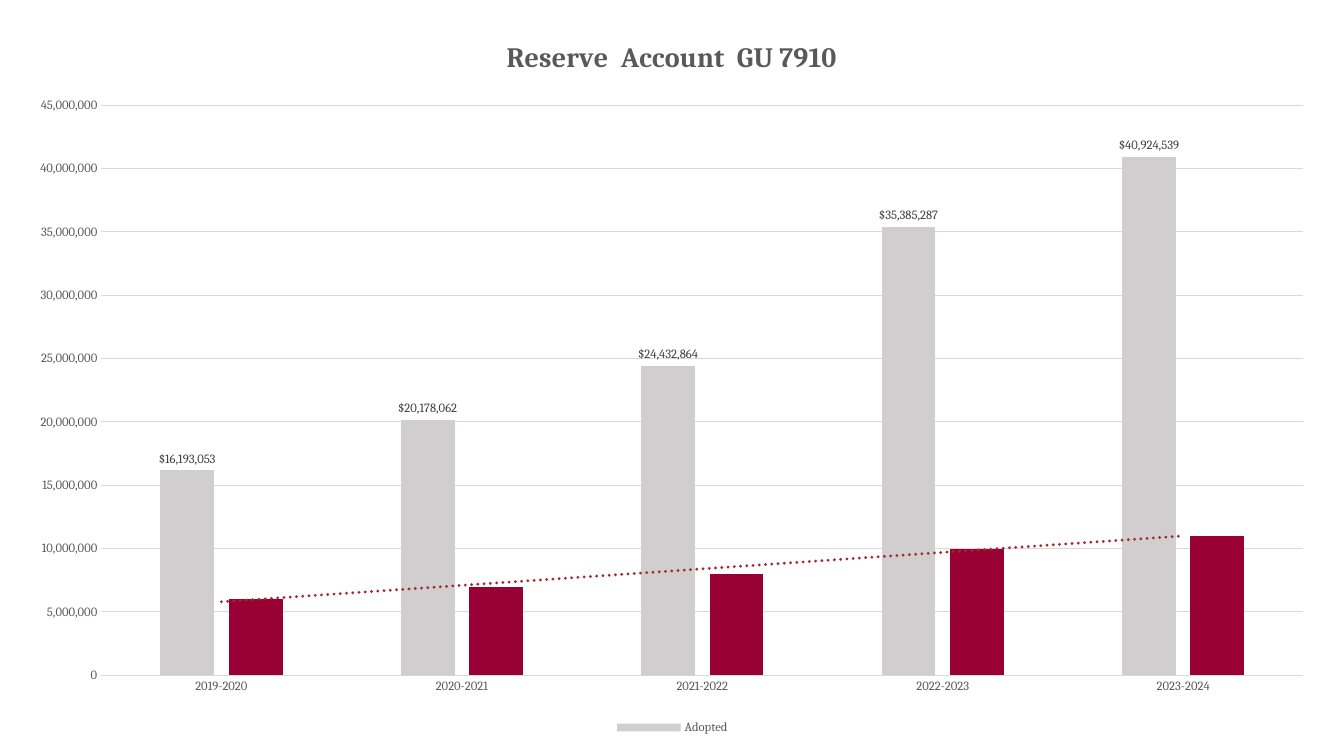
"""Build the reserve account slide with its clustered column chart."""
from dataclasses import dataclass

from lxml.etree import _Element as Element
from pptx import Presentation
from pptx.chart.chart import Chart
from pptx.chart.data import CategoryChartData as ChartData
from pptx.dml.color import RGBColor
from pptx.enum.chart import XL_CHART_TYPE as ChartType
from pptx.enum.chart import XL_LABEL_POSITION as LabelPosition
from pptx.enum.chart import XL_LEGEND_POSITION as LegendPosition
from pptx.enum.chart import XL_TICK_MARK as TickMark
from pptx.oxml import parse_xml
from pptx.oxml.ns import nsdecls
from pptx.text.text import Font
from pptx.util import Cm, Length, Pt

FONT_NAME = "Cambria"
BLACK = RGBColor(0x00, 0x00, 0x00)
DARK_GREY = RGBColor(0x40, 0x40, 0x40)
TEXT_GREY = RGBColor(0x59, 0x59, 0x59)
LINE_GREY = RGBColor(0xD9, 0xD9, 0xD9)
COLUMN_GREY = RGBColor(0xD0, 0xCE, 0xCE)
CRIMSON = RGBColor(0x99, 0x00, 0x33)
TREND_RED = RGBColor(0xA3, 0x2B, 0x30)

CHART_MARGIN = Cm(0.36)
CHART_WIDTH = Cm(33.17)
CHART_HEIGHT = Cm(18.26)
YEARS = [f"{year}-{year + 1}" for year in range(2019, 2024)]


@dataclass(frozen=True)
class ColumnSeries:
    """One set of columns and how it is dressed."""

    name: str
    values: tuple[int, ...]
    color: RGBColor
    labelled: bool = False
    trend_color: RGBColor | None = None


COLUMNS = (
    ColumnSeries("Adopted", (16193053, 20178062, 24432864, 35385287, 40924539),
                 COLUMN_GREY, labelled=True),
    ColumnSeries("Series 2", (6000000, 7000000, 8000000, 10000000, 11000000),
                 CRIMSON, trend_color=TREND_RED),
)


def style_font(font: Font, size: float, color: RGBColor, bold: bool = False) -> None:
    """Set the face, size, colour and weight of a font."""
    font.name = FONT_NAME
    font.size = Pt(size)
    font.bold = bold
    font.color.rgb = color


def make_layout(left: Length, top: Length, extra: str = "") -> Element:
    """Return a manual layout measured from the chart's corner."""
    target = '<c:layoutTarget val="inner"/>' if extra else ""
    return parse_xml(
        f'<c:layout {nsdecls("c")}><c:manualLayout>{target}'
        '<c:xMode val="edge"/><c:yMode val="edge"/>'
        f'<c:x val="{left / CHART_WIDTH}"/><c:y val="{top / CHART_HEIGHT}"/>'
        f'{extra}</c:manualLayout></c:layout>')


def make_trendline(color: RGBColor) -> Element:
    """Return a dotted linear trend line."""
    return parse_xml(
        f'<c:trendline {nsdecls("c", "a")}><c:spPr>'
        f'<a:ln w="{Pt(2.25)}" cap="rnd"><a:solidFill><a:srgbClr val="{color}"/>'
        '</a:solidFill><a:prstDash val="sysDot"/></a:ln></c:spPr>'
        '<c:trendlineType val="linear"/><c:dispRSqr val="0"/>'
        '<c:dispEq val="0"/></c:trendline>')


def style_title(chart: Chart) -> None:
    """Write the chart title."""
    chart.has_title = True
    paragraph = chart.chart_title.text_frame.paragraphs[0]
    run = paragraph.add_run()
    run.text = "Reserve  Account  GU 7910"
    style_font(run.font, 20, TEXT_GREY, bold=True)


def style_axes(chart: Chart) -> None:
    """Dress both axes and the gridlines."""
    for axis in (chart.category_axis, chart.value_axis):
        axis.major_tick_mark = axis.minor_tick_mark = TickMark.NONE
        style_font(axis.tick_labels.font, 9, TEXT_GREY)
    value_axis = chart.value_axis
    value_axis.minimum_scale = 0
    value_axis.maximum_scale = 45000000
    value_axis.major_unit = 5000000
    value_axis.tick_labels.number_format = "#,##0"
    value_axis.tick_labels.number_format_is_linked = False
    value_axis.format.line.fill.background()
    for line in (chart.category_axis.format.line, value_axis.major_gridlines.format.line):
        line.color.rgb = LINE_GREY
        line.width = Pt(0.75)


def style_columns(chart: Chart) -> None:
    """Colour the columns and add value labels and the trend line."""
    plot = chart.plots[0]
    plot.gap_width = 219
    plot.overlap = -27
    plot.vary_by_categories = False
    for column, series in zip(COLUMNS, plot.series):
        series.format.fill.solid()
        series.format.fill.fore_color.rgb = column.color
        series.invert_if_negative = False
        if column.labelled:
            labels = series.data_labels
            labels.show_value = True
            labels.number_format = '"$"#,##0'
            labels.number_format_is_linked = False
            labels.position = LabelPosition.OUTSIDE_END
            style_font(labels.font, 9, DARK_GREY)
        if column.trend_color is not None:
            category = series._element.xpath("c:cat")[0]
            category.addprevious(make_trendline(column.trend_color))


def style_legend(chart: Chart) -> None:
    """Show the legend below the plot without the second series."""
    chart.has_legend = True
    legend = chart.legend
    legend.position = LegendPosition.BOTTOM
    legend.include_in_layout = False
    style_font(legend.font, 9, TEXT_GREY)
    legend._element.xpath("c:legendPos")[0].addnext(parse_xml(
        f'<c:legendEntry {nsdecls("c")}><c:idx val="1"/>'
        '<c:delete val="1"/></c:legendEntry>'))


def place_parts(chart: Chart) -> None:
    """Fix the places of the title and the plot area."""
    chart_space = chart._chartSpace
    for layout in chart_space.xpath("c:chart/c:title/c:layout | c:chart/c:plotArea/c:layout"):
        layout.getparent().remove(layout)
    title_text = chart_space.xpath("c:chart/c:title/c:tx")[0]
    title_text.addnext(make_layout(Cm(12.28), Cm(0.5)))
    plot_size = (f'<c:w val="{Cm(30.3) / CHART_WIDTH}"/>'
                 f'<c:h val="{Cm(14.37) / CHART_HEIGHT}"/>')
    plot_area = chart_space.xpath("c:chart/c:plotArea")[0]
    plot_area.insert(0, make_layout(Cm(2.19), Cm(2.29), plot_size))


def main() -> None:
    """Create and save the presentation."""
    presentation = Presentation()
    presentation.slide_width = Cm(33.87)
    presentation.slide_height = Cm(19.05)
    slide = presentation.slides.add_slide(presentation.slide_layouts[6])
    data = ChartData(number_format="#,##0")
    data.categories = YEARS
    for column in COLUMNS:
        data.add_series(column.name, column.values)
    chart = slide.shapes.add_chart(
        ChartType.COLUMN_CLUSTERED, CHART_MARGIN, CHART_MARGIN,
        CHART_WIDTH, CHART_HEIGHT, data).chart
    style_font(chart.font, 10, BLACK)
    style_title(chart)
    style_axes(chart)
    style_columns(chart)
    style_legend(chart)
    place_parts(chart)
    presentation.save("out.pptx")


if __name__ == "__main__":
    main()
